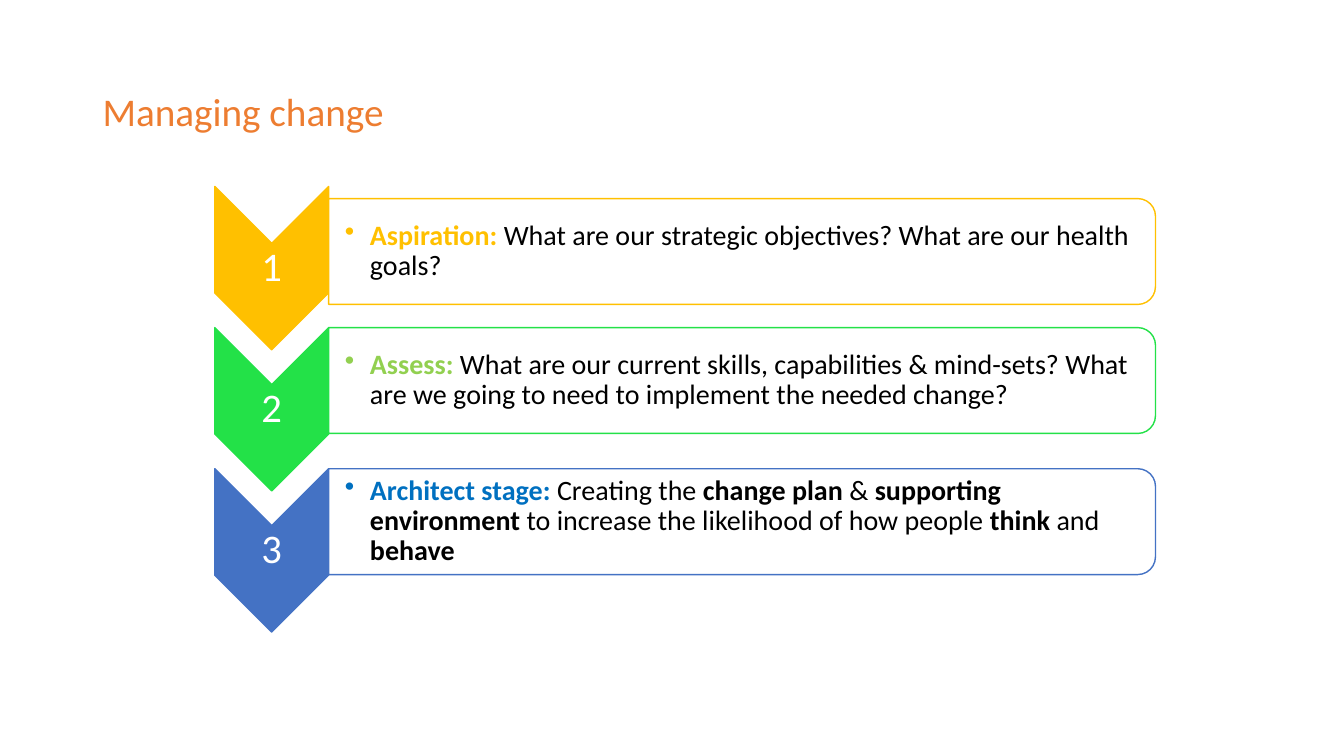
from pptx import Presentation
from pptx.dml.color import RGBColor
from pptx.enum.shapes import MSO_SHAPE as Preset
from pptx.enum.text import MSO_ANCHOR as Anchor, PP_ALIGN as Align
from pptx.oxml.ns import qn
from pptx.util import Inches, Pt
from lxml import etree

FONT = "Calibri"
ORANGE = RGBColor(0xED, 0x7D, 0x31)
GOLD = RGBColor(0xFF, 0xC0, 0x00)
GREEN = RGBColor(0x23, 0xE1, 0x48)
LIME = RGBColor(0x92, 0xD0, 0x50)
BLUE = RGBColor(0x44, 0x72, 0xC4)
DEEP_BLUE = RGBColor(0x00, 0x70, 0xC0)
WHITE = RGBColor(0xFF, 0xFF, 0xFF)
BLACK = RGBColor(0x00, 0x00, 0x00)

CHEVRON_WIDTH, CHEVRON_HEIGHT = 1.13, 1.62
BAR_HEIGHT = 1.05
STEP_PITCH = 1.4

# Chevron colour, label colour, drop of the bar below the chevron's top,
# label, then (text, bold) spans
STEPS = [
    (GOLD, GOLD, 0.12, "Aspiration: ",
     [("What are our strategic objectives? What are our health goals?", False)]),
    (GREEN, LIME, 0, "Assess: ",
     [("What are our current skills, capabilities & mind-sets? What are we "
       "going to need to implement the needed change?", False)]),
    (BLUE, DEEP_BLUE, 0, "Architect stage: ",
     [("Creating the ", False), ("change plan ", True), ("& ", False),
      ("supporting environment ", True),
      ("to increase the likelihood of how people ", False),
      ("think", True), (" and ", False), ("behave", True)]),
]


def add_text_box(page, left, top, width, height, size, margins):
    """Add a middle-anchored text box and return its first paragraph."""
    box = page.shapes.add_textbox(Inches(left), Inches(top), Inches(width), Inches(height))
    frame = box.text_frame
    frame.word_wrap = True
    frame.vertical_anchor = Anchor.MIDDLE
    (frame.margin_left, frame.margin_top,
     frame.margin_right, frame.margin_bottom) = map(Inches, margins)
    para = frame.paragraphs[0]
    para.line_spacing = 0.9
    para.font.name = FONT
    para.font.size = Pt(size)
    return para


def add_turned_shape(page, preset, left, top, width, height, fill, line):
    """Add a shape turned by 90 degrees that fills the given box once turned."""
    shape = page.shapes.add_shape(
        preset, Inches(left + (width - height) / 2), Inches(top + (height - width) / 2),
        Inches(height), Inches(width))
    shape.rotation = 90
    shape.shadow.inherit = False
    shape.fill.solid()
    shape.fill.fore_color.rgb = fill
    shape.line.color.rgb = line
    shape.line.width = Pt(1)
    return shape


def add_bullet(para, indent):
    properties = para._p.get_or_add_pPr()
    properties.set("marL", str(Inches(indent)))
    properties.set("indent", str(-Inches(indent)))
    etree.SubElement(properties, qn("a:buChar")).set("char", "•")


def add_title(page, left, top, width, height):
    para = add_text_box(page, left, top, width, height, 28, (0.1, 0.05, 0.1, 0.05))
    para.text = "Managing change"
    para.font.color.rgb = ORANGE


def add_step(page, left, top, width, number, step):
    colour, label_colour, bar_drop, label, spans = step

    # Numbered chevron
    add_turned_shape(page, Preset.CHEVRON, left, top, CHEVRON_WIDTH, CHEVRON_HEIGHT,
                     colour, colour)
    para = add_text_box(page, left, top + CHEVRON_WIDTH / 2, CHEVRON_WIDTH,
                        CHEVRON_HEIGHT - CHEVRON_WIDTH, 29, [0.02] * 4)
    para.text = str(number)
    para.alignment = Align.CENTER
    para.font.color.rgb = WHITE

    # Bar with rounded right corners
    bar_left, bar_top = left + CHEVRON_WIDTH, top + bar_drop
    bar_width = width - CHEVRON_WIDTH
    add_turned_shape(page, Preset.ROUND_2_SAME_RECTANGLE, bar_left, bar_top,
                     bar_width, BAR_HEIGHT, WHITE, colour)

    # Bulleted description
    para = add_text_box(page, bar_left, bar_top + 0.05, bar_width - 0.05,
                        BAR_HEIGHT - 0.1, 20, (0.16, 0.01, 0.01, 0.01))
    add_bullet(para, 0.25)
    coloured = [(label, True, label_colour)]
    coloured += [(text, bold, BLACK) for text, bold in spans]
    for text, bold, text_colour in coloured:
        span = para.add_run()
        span.text = text
        span.font.bold = bold
        span.font.color.rgb = text_colour


def add_steps(page, left, top, width):
    for index, step in enumerate(STEPS):
        add_step(page, left, top + index * STEP_PITCH, width, index + 1, step)


def main():
    deck = Presentation()
    deck.slide_width, deck.slide_height = Inches(13.33), Inches(7.5)
    page = deck.slides.add_slide(deck.slide_layouts[6])
    add_title(page, 0.92, 0.4, 11.5, 1.45)
    add_steps(page, 2.13, 1.85, 9.33)
    deck.save("out.pptx")


if __name__ == "__main__":
    main()
